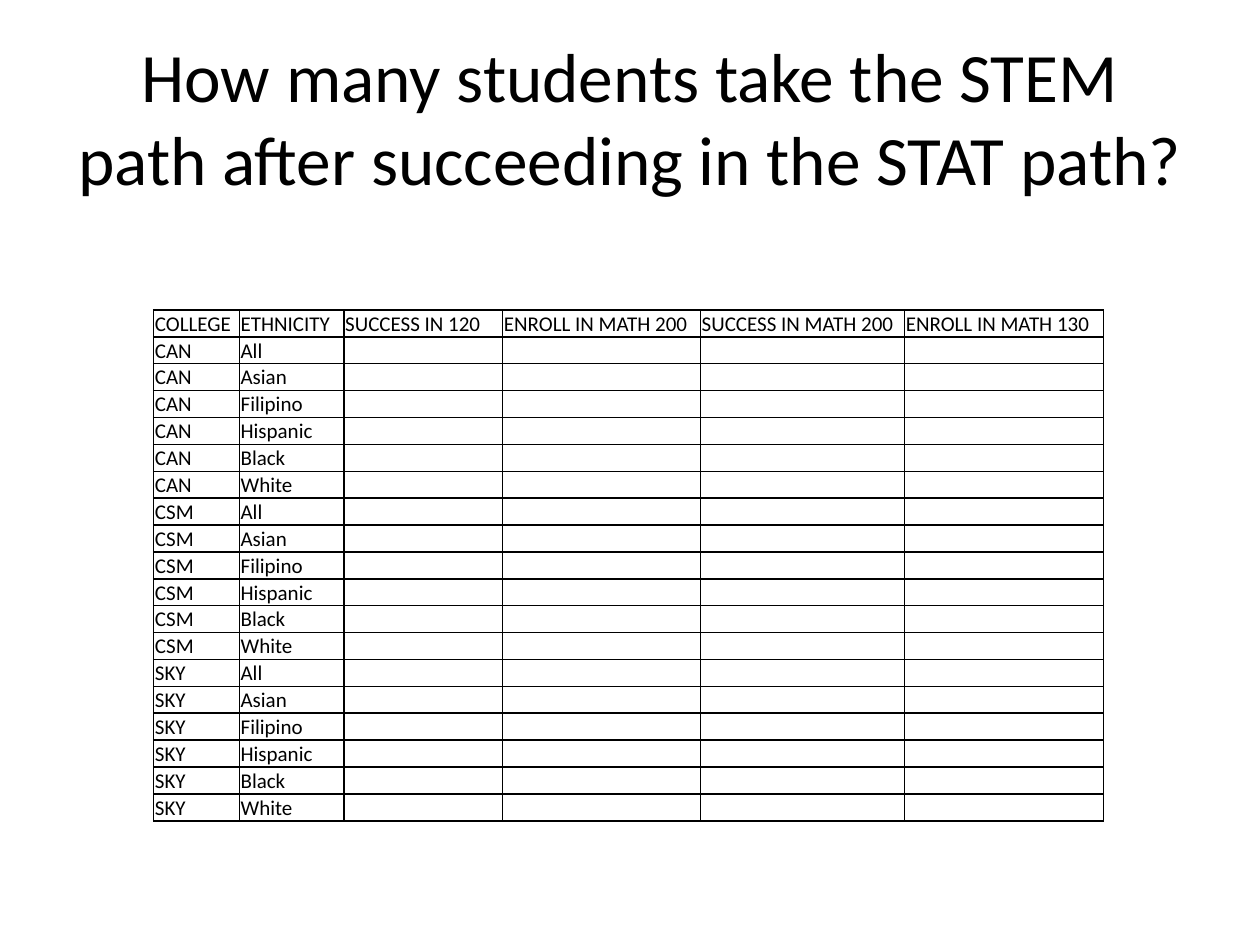
from lxml import etree
from pptx import Presentation
from pptx.dml.color import RGBColor
from pptx.enum.text import MSO_ANCHOR, PP_ALIGN
from pptx.oxml.ns import qn
from pptx.util import Inches, Pt

MIDDLE, BOTTOM = MSO_ANCHOR.MIDDLE, MSO_ANCHOR.BOTTOM
CENTER = PP_ALIGN.CENTER

COLORS = {"text": "000000", "border": "000000", "background": "FFFFFF"}
FONT = "Calibri"
TITLE_SIZE, CELL_SIZE, BORDER_WIDTH = 39.6, 12, 1
WIDTH, HEIGHT = 10, 7.5

TITLE = "How many students take the STEM path after succeeding in the STAT path?"
HEADINGS = ["COLLEGE", "ETHNICITY", "SUCCESS IN 120", "ENROLL IN MATH 200",
            "SUCCESS IN MATH 200", "ENROLL IN MATH 130"]
COLUMN_WIDTHS = [0.68, 0.83, 1.26, 1.57, 1.62, 1.58]
COLLEGES = ["CAN", "CSM", "SKY"]
ETHNICITIES = ["All", "Asian", "Filipino", "Hispanic", "Black", "White"]


class SlideBuilder:
    """Holds the style and the current slide; boxes are shares of the slide."""

    def __init__(self, presentation):
        self.width = presentation.slide_width
        self.height = presentation.slide_height
        self.slide = presentation.slides.add_slide(presentation.slide_layouts[6])
        fill = self.slide.background.fill
        fill.solid()
        fill.fore_color.rgb = RGBColor.from_string(COLORS["background"])

    def box(self, left, top, width, height):
        return (round(left * self.width), round(top * self.height),
                round(width * self.width), round(height * self.height))

    def text_run(self, paragraph, text, size):
        run = paragraph.add_run()
        run.text = text
        run.font.name = FONT
        run.font.size = Pt(size)
        run.font.color.rgb = RGBColor.from_string(COLORS["text"])

    def title(self, text, *shares):
        frame = self.slide.shapes.add_textbox(*self.box(*shares)).text_frame
        frame.word_wrap = True
        frame.vertical_anchor = MIDDLE
        frame.paragraphs[0].alignment = CENTER
        self.text_run(frame.paragraphs[0], text, TITLE_SIZE)

    def borders(self, cell):
        properties = cell._tc.get_or_add_tcPr()
        for position, side in enumerate(("lnL", "lnR", "lnT", "lnB")):
            line = etree.Element(qn(f"a:{side}"), w=str(Pt(BORDER_WIDTH)))
            solid = etree.SubElement(line, qn("a:solidFill"))
            etree.SubElement(solid, qn("a:srgbClr"), val=COLORS["border"])
            properties.insert(position, line)

    def cell(self, cell, text):
        cell.fill.background()
        cell.vertical_anchor = BOTTOM
        cell.margin_left = cell.margin_right = cell.margin_top = Inches(0.01)
        cell.margin_bottom = 0
        paragraph = cell.text_frame.paragraphs[0]
        if text:
            self.text_run(paragraph, text, CELL_SIZE)
        else:
            # An empty cell keeps the row's text size
            etree.SubElement(paragraph._p, qn("a:endParaRPr"),
                             sz=str(CELL_SIZE * 100))
        self.borders(cell)

    def table(self, rows, column_widths, *shares):
        box = self.box(*shares)
        table = self.slide.shapes.add_table(
            len(rows), len(column_widths), *box).table
        table.first_row = table.horz_banding = False
        for column, width in zip(table.columns, column_widths):
            column.width = Inches(width)
        for row, texts in zip(table.rows, rows):
            row.height = box[3] // len(rows)
            for cell, text in zip(row.cells, texts):
                self.cell(cell, text)


def main():
    presentation = Presentation()
    presentation.slide_width = Inches(WIDTH)
    presentation.slide_height = Inches(HEIGHT)
    builder = SlideBuilder(presentation)

    # Results by college and ethnicity, left open to fill in
    open_cells = [""] * (len(HEADINGS) - 2)
    rows = [HEADINGS] + [[college, ethnicity] + open_cells
                         for college in COLLEGES for ethnicity in ETHNICITIES]
    builder.table(rows, COLUMN_WIDTHS,
                  1.22 / WIDTH, 2.46 / HEIGHT, 7.56 / WIDTH, 4.06 / HEIGHT)

    # Question as the title
    builder.title(TITLE, 0.05, 0.04, 0.9, 1.25 / HEIGHT)

    presentation.save("out.pptx")


if __name__ == "__main__":
    main()
